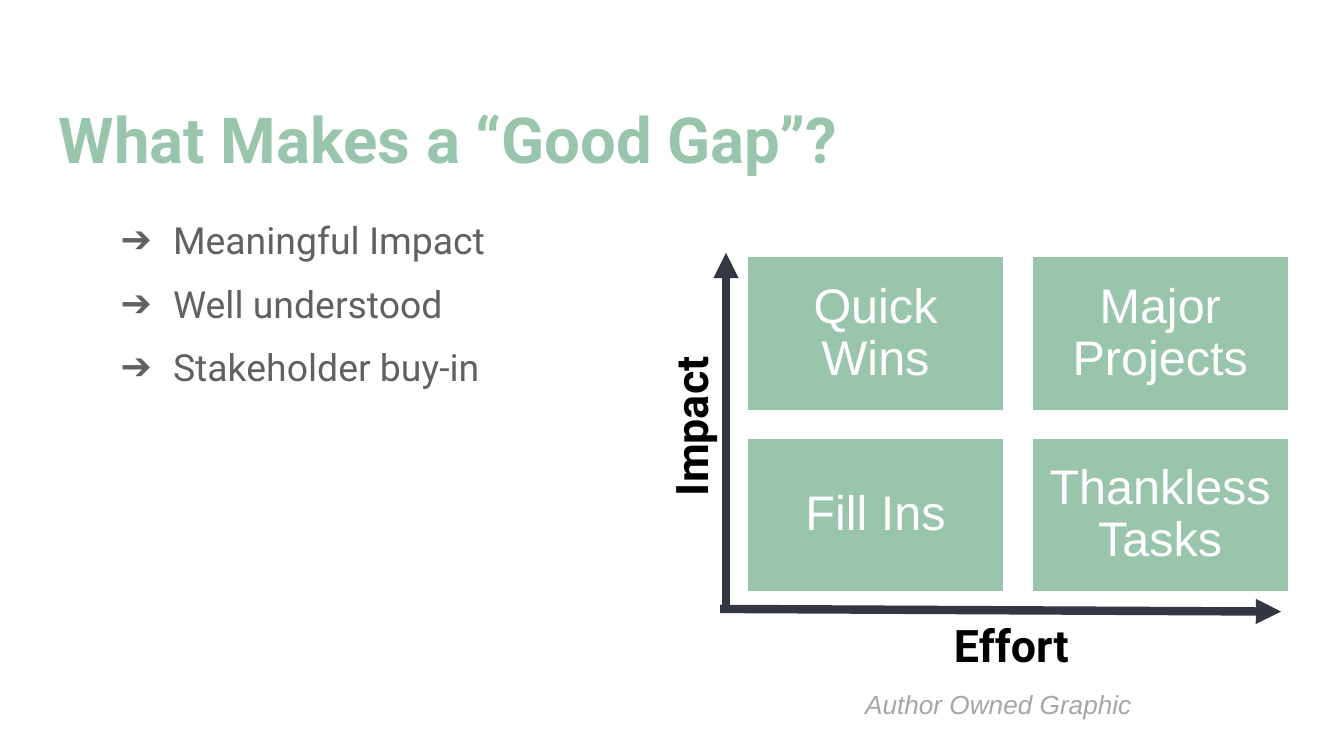
import pptx
import pptx.dml.color
import pptx.enum.shapes
import pptx.enum.text
import pptx.oxml
import pptx.oxml.ns
import pptx.util
from pptx.util import Cm, Pt

GREEN = pptx.dml.color.RGBColor(0x99, 0xC5, 0xAD)
WHITE = pptx.dml.color.RGBColor(0xFF, 0xFF, 0xFF)
BLACK = pptx.dml.color.RGBColor(0x00, 0x00, 0x00)
GREY = pptx.dml.color.RGBColor(0x61, 0x61, 0x61)
PALE_GREY = pptx.dml.color.RGBColor(0xA6, 0xA6, 0xA6)
NAVY = pptx.dml.color.RGBColor(0x33, 0x36, 0x43)
ALIGN = pptx.enum.text.PP_ALIGN
ANCHOR = pptx.enum.text.MSO_ANCHOR
NS = pptx.oxml.ns.nsdecls("a")


def place(shape, left, top, width, height):
    shape.left, shape.top = Cm(left), Cm(top)
    shape.width, shape.height = Cm(width), Cm(height)


def format_text(shape, name, size, color, align, anchor=ANCHOR.TOP,
                bold=False, italic=False):
    frame = shape.text_frame
    frame.word_wrap = True
    frame.auto_size = pptx.enum.text.MSO_AUTO_SIZE.NONE
    frame.vertical_anchor = anchor
    for paragraph in frame.paragraphs:
        paragraph.alignment = align
        for run in paragraph.runs:
            run.font.name = name
            run.font.size = Pt(size)
            run.font.color.rgb = color
            run.font.bold = bold
            run.font.italic = italic


deck = pptx.Presentation()
deck.slide_width, deck.slide_height = Cm(25.4), Cm(14.29)
slide = deck.slides.add_slide(deck.slide_layouts[1])

# Title
title = slide.shapes.title
place(title, 0.86, 1.65, 23.67, 1.6)
title.text_frame.text = "What Makes a “Good Gap”?"
format_text(title, "Roboto", 34, GREEN, ALIGN.LEFT, bold=True)

# List of criteria
criteria = slide.placeholders[1]
place(criteria, 1.75, 3.86, 10.21, 8.76)
criteria.text_frame.text = "Meaningful Impact\nWell understood\nStakeholder buy-in"
for index, paragraph in enumerate(criteria.text_frame.paragraphs):
    properties = paragraph._p.get_or_add_pPr()
    properties.set("marL", str(Cm(1.27)))
    properties.set("indent", str(Cm(-0.99)))
    for bullet in (
        f'<a:buClr {NS}><a:srgbClr val="{GREY}"/></a:buClr>',
        f'<a:buFont {NS} typeface="Roboto"/>',
        f'<a:buChar {NS} char="➔"/>',
    ):
        properties.append(pptx.oxml.parse_xml(bullet))
    paragraph.space_before = Pt(10 if index else 0)
format_text(criteria, "Roboto", 20, GREY, ALIGN.LEFT)

for frame in (title.text_frame, criteria.text_frame):
    frame.margin_left = frame.margin_right = Cm(0.25)
    frame.margin_top = frame.margin_bottom = Cm(0.25)

# Quadrants of the matrix
quadrants = [["Quick Wins", "Major Projects"], ["Fill Ins", "Thankless Tasks"]]
for row, labels in enumerate(quadrants):
    for column, label in enumerate(labels):
        quadrant = slide.shapes.add_shape(
            pptx.enum.shapes.MSO_SHAPE.RECTANGLE,
            Cm(14.1 + 5.38 * column), Cm(4.83 + 3.43 * row), Cm(4.9), Cm(2.95))
        quadrant.shadow.inherit = False
        quadrant.fill.solid()
        quadrant.fill.fore_color.rgb = GREEN
        quadrant.line.color.rgb = WHITE
        quadrant.line.width = Pt(2)
        frame = quadrant.text_frame
        frame.text = label
        frame.margin_left = frame.margin_right = Cm(0.28)
        frame.margin_top = frame.margin_bottom = Cm(0.28)
        frame.paragraphs[0].line_spacing = 0.9
        format_text(quadrant, "Arial", 26, WHITE, ALIGN.CENTER, ANCHOR.MIDDLE)

# Impact and effort axes
for ends in ((13.72, 11.48, 13.72, 4.78), (13.61, 11.51, 24.21, 11.56)):
    axis = slide.shapes.add_connector(
        pptx.enum.shapes.MSO_CONNECTOR.STRAIGHT, *map(Cm, ends))
    axis.line.color.rgb = NAVY
    axis.line.width = Pt(4.5)
    axis.line._get_or_add_ln().append(
        pptx.oxml.parse_xml(f'<a:tailEnd {NS} type="triangle"/>'))
    axis._element.spPr.append(pptx.oxml.parse_xml(f"<a:effectLst {NS}/>"))

# Axis labels
for label, left, top, rotation in (("Impact", 9.5, 7.42, 270),
                                   ("Effort", 15.57, 11.56, 0)):
    axis_label = slide.shapes.add_textbox(Cm(left), Cm(top), Cm(7.09), Cm(1.27))
    axis_label.rotation = rotation
    axis_label.text_frame.text = label
    format_text(axis_label, "Roboto", 24, BLACK, ALIGN.CENTER, bold=True)

# Credit line
credit = slide.shapes.add_textbox(Cm(16.1), Cm(12.88), Cm(6.02), Cm(0.86))
credit.text_frame.text = "Author Owned Graphic"
format_text(credit, "Arial", 14, PALE_GREY, ALIGN.LEFT, italic=True)

deck.save("out.pptx")
